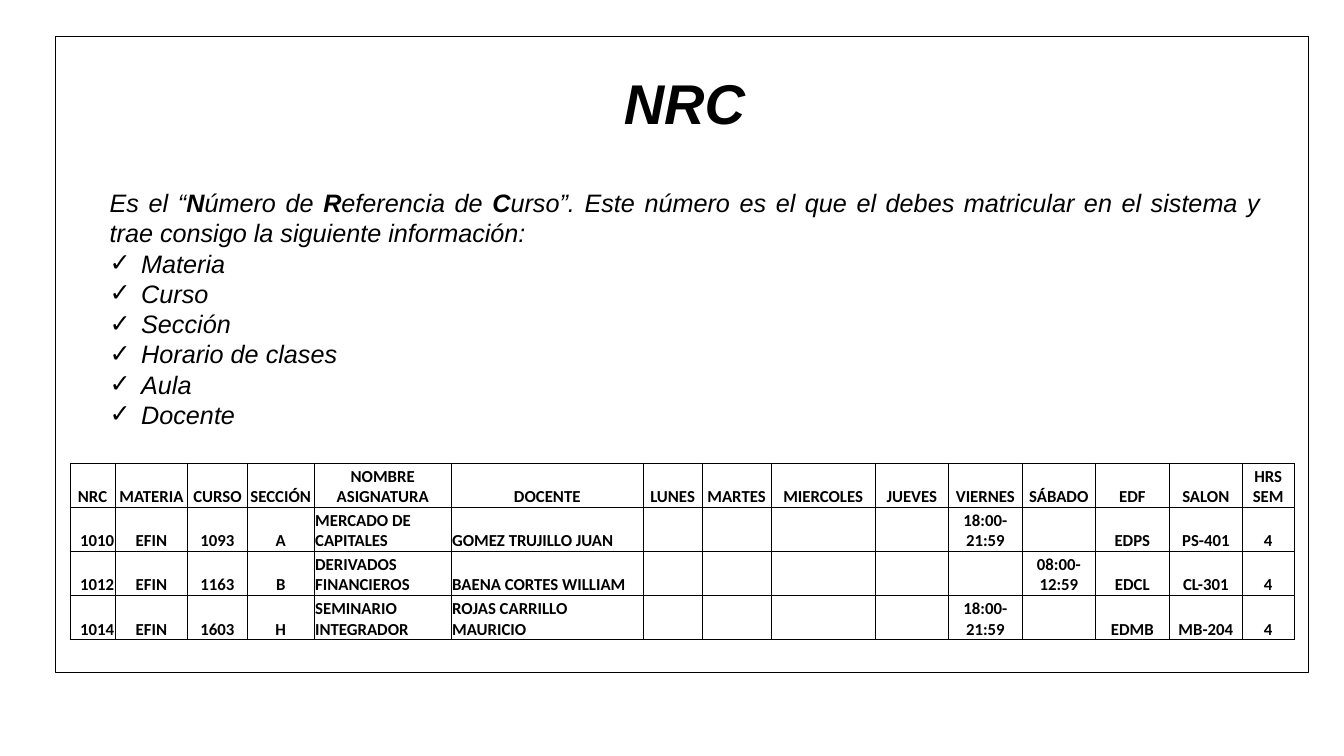
from lxml import etree
from pptx import Presentation
from pptx.dml.color import RGBColor
from pptx.enum.shapes import MSO_SHAPE
from pptx.enum.text import MSO_ANCHOR, MSO_AUTO_SIZE, PP_ALIGN
from pptx.oxml.ns import qn
from pptx.util import Pt

RECTANGLE = MSO_SHAPE.RECTANGLE
TOP, BOTTOM = MSO_ANCHOR.TOP, MSO_ANCHOR.BOTTOM
GROW = MSO_AUTO_SIZE.SHAPE_TO_FIT_TEXT
LEFT, CENTER, RIGHT, JUSTIFY = PP_ALIGN.LEFT, PP_ALIGN.CENTER, PP_ALIGN.RIGHT, PP_ALIGN.JUSTIFY
BLACK = "000000"

INTRO = [
    ("Es el “", False), ("N", True), ("úmero de ", False), ("R", True),
    ("eferencia de ", False), ("C", True),
    ("urso”. Este número es el que el debes matricular en el sistema y "
     "trae consigo la siguiente información:", False),
]
ITEMS = ["Materia", "Curso", "Sección", "Horario de clases", "Aula", "Docente"]

COLUMN_WIDTHS = [32.4, 51.8, 42.6, 47.8, 97.9, 137.2, 41.9, 49.5, 74.2] + [52.5] * 5 + [36.6]
ROW_HEIGHT = 31.5
HEADER = ["NRC", "MATERIA", "CURSO", "SECCIÓN", "NOMBRE ASIGNATURA", "DOCENTE",
          "LUNES", "MARTES", "MIERCOLES", "JUEVES", "VIERNES", "SÁBADO",
          "EDF", "SALON", "HRS SEM"]
COURSES = [
    ["1010", "EFIN", "1093", "A", "MERCADO DE CAPITALES", "GOMEZ TRUJILLO JUAN",
     "", "", "", "", "18:00-21:59", "", "EDPS", "PS-401", "4"],
    ["1012", "EFIN", "1163", "B", "DERIVADOS FINANCIEROS", "BAENA CORTES WILLIAM",
     "", "", "", "", "", "08:00-12:59", "EDCL", "CL-301", "4"],
    ["1014", "EFIN", "1603", "H", "SEMINARIO INTEGRADOR", "ROJAS CARRILLO MAURICIO",
     "", "", "", "", "18:00-21:59", "", "EDMB", "MB-204", "4"],
]
COURSE_ALIGN = {0: RIGHT, 4: LEFT, 5: LEFT}


def color(value):
    return RGBColor.from_string(value)


def write(p, text, size=18, font="Arial", bold=False, italic=False, align=LEFT):
    p.alignment = align
    r = p.add_run()
    r.text = text
    r.font.size = Pt(size)
    r.font.name = font
    r.font.bold = bold
    r.font.italic = italic
    r.font.color.rgb = color(BLACK)


def add_check(p, indent):
    pPr = p._p.get_or_add_pPr()
    pPr.set("marL", str(Pt(indent)))
    pPr.set("indent", str(-Pt(indent)))
    etree.SubElement(pPr, qn("a:buFont")).set("typeface", "Arial")
    etree.SubElement(pPr, qn("a:buChar")).set("char", "✓")


def add_borders(cell, width):
    tcPr = cell._tc.get_or_add_tcPr()
    for side in ("lnL", "lnR", "lnT", "lnB"):
        ln = etree.SubElement(tcPr, qn(f"a:{side}"), w=str(Pt(width)))
        fill = etree.SubElement(ln, qn("a:solidFill"))
        etree.SubElement(fill, qn("a:srgbClr"), val=BLACK)


def place_title(s, x, y, w, h):
    sp = s.shapes.title
    sp.left, sp.top, sp.width, sp.height = Pt(x), Pt(y), Pt(w), Pt(h)
    tf = sp.text_frame
    tf.word_wrap = True
    tf.auto_size = GROW
    tf.vertical_anchor = TOP
    write(tf.paragraphs[0], "NRC", size=40, bold=True, italic=True, align=CENTER)


def add_description(s, x, y, w, h):
    tf = s.shapes.add_textbox(Pt(x), Pt(y), Pt(w), Pt(h)).text_frame
    tf.word_wrap = True
    tf.auto_size = GROW
    for text, bold in INTRO:
        write(tf.paragraphs[0], text, bold=bold, italic=True, align=JUSTIFY)
    for item in ITEMS:
        p = tf.add_paragraph()
        add_check(p, 22.5)
        write(p, item, italic=True, align=JUSTIFY)


def add_schedule(s, x, y, w, h):
    rows = [HEADER] + COURSES
    table = s.shapes.add_table(len(rows), len(HEADER), Pt(x), Pt(y), Pt(w), Pt(h)).table
    table.first_row = table.horz_banding = False
    for column, width in zip(table.columns, COLUMN_WIDTHS):
        column.width = Pt(width)
    for i, values in enumerate(rows):
        table.rows[i].height = Pt(h / len(rows))
        for j, text in enumerate(values):
            cell = table.cell(i, j)
            cell.margin_left = cell.margin_right = cell.margin_top = Pt(0.7)
            cell.margin_bottom = Pt(0)
            cell.vertical_anchor = BOTTOM
            add_borders(cell, 0.5)
            cell.fill.background()
            if text:
                align = COURSE_ALIGN.get(j, CENTER) if i else CENTER
                write(cell.text_frame.paragraphs[0], text, size=12,
                      font="Calibri", bold=True, align=align)


def add_frame(s, x, y, w, h):
    sp = s.shapes.add_shape(RECTANGLE, Pt(x), Pt(y), Pt(w), Pt(h))
    sp.shadow.inherit = False
    sp.fill.background()
    sp.line.color.rgb = color(BLACK)
    sp.line.width = Pt(1)


def build_nrc_slide(s, x, y, w, h):
    place_title(s, x + 128.2, y + 19.4, 642.2, 55.7)
    add_description(s, x + 31.7, y + 104.4, w - 59, 181.4)
    add_schedule(s, x + 10.3, y + 305, sum(COLUMN_WIDTHS), ROW_HEIGHT * 4)
    add_frame(s, x, y, w, h)


def main():
    prs = Presentation()
    prs.slide_width, prs.slide_height = Pt(960), Pt(540)
    s = prs.slides.add_slide(prs.slide_layouts[5])
    build_nrc_slide(s, 39.6, 25.9, 895, 454.3)
    prs.save("out.pptx")


if __name__ == "__main__":
    main()
